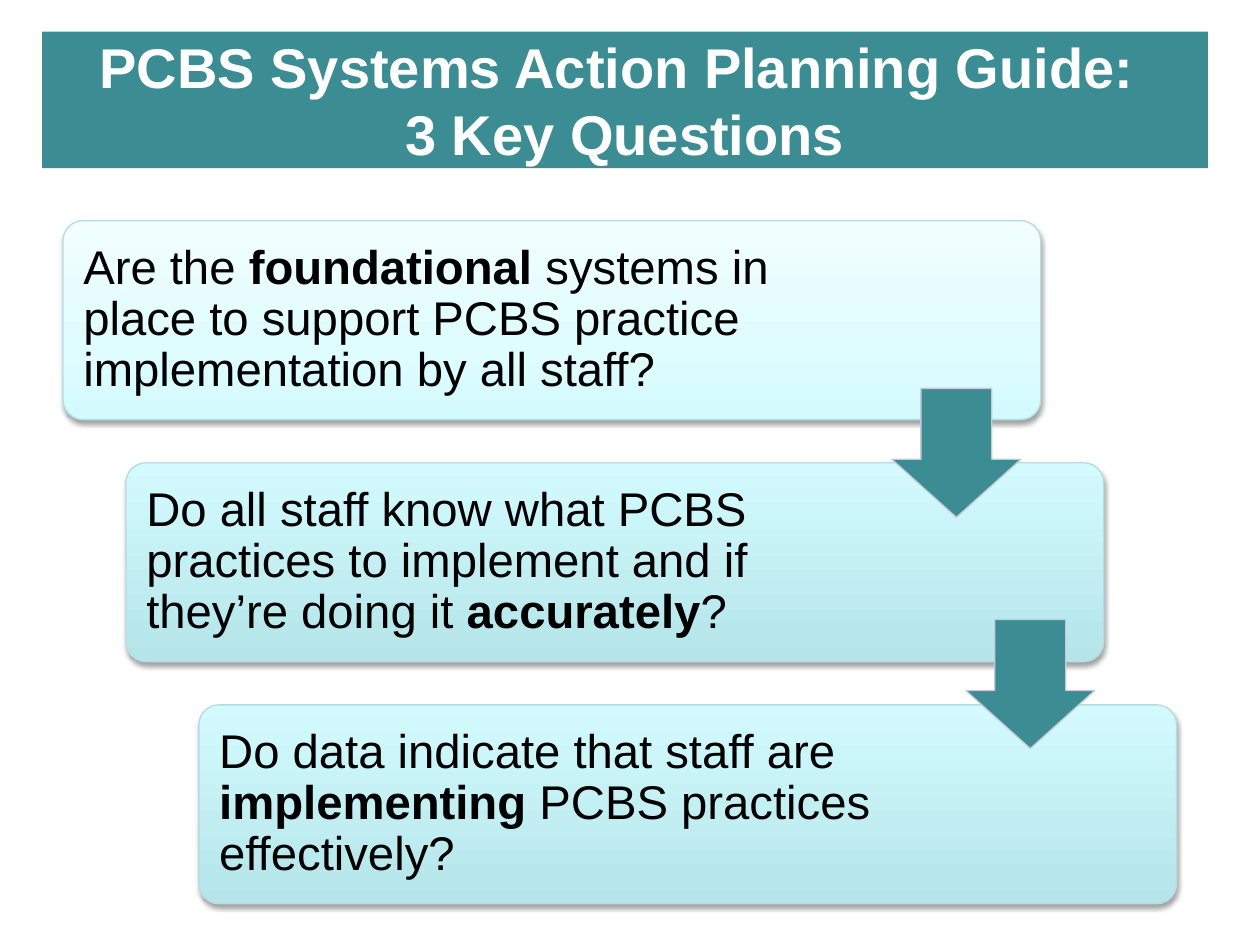
from dataclasses import dataclass

import lxml.etree
import pptx
import pptx.dml.color
import pptx.enum.shapes
import pptx.enum.text
import pptx.oxml.ns
import pptx.util

Cm = pptx.util.Cm
Pt = pptx.util.Pt
SHAPES = pptx.enum.shapes.MSO_SHAPE
ALIGN = pptx.enum.text.PP_ALIGN


@dataclass(frozen=True)
class Theme:
    font: str = "Arial"
    title_size: int = 32
    body_size: int = 27
    teal: str = "3C8C93"
    title_text: str = "FFFFFF"
    body_text: str = "000000"
    card_line: str = "B6DCDF"
    arrow_line: str = "C9C9D9"
    # Gradient stops run from the bottom of a card to its top.
    light_card: tuple = ((0, "D3FBFF"), (35, "DFFCFF"), (100, "F2FEFF"))
    deep_card: tuple = ((0, "B5E5E9"), (100, "D3FBFF"))


THEME = Theme()


@dataclass(frozen=True)
class Box:
    """A region of the slide, in centimetres."""
    left: float
    top: float
    width: float
    height: float

    def inner(self, left, top, width, height):
        return Box(self.left + left, self.top + top, width, height)

    def lengths(self):
        return Cm(self.left), Cm(self.top), Cm(self.width), Cm(self.height)


def color(value):
    return pptx.dml.color.RGBColor.from_string(value)


def add_child(parent, tag, **attributes):
    child = lxml.etree.SubElement(parent, pptx.oxml.ns.qn(tag))
    for name, value in attributes.items():
        child.set(name, str(value))
    return child


def add_plain_shape(page, kind, box, line=None):
    shape = page.shapes.add_shape(kind, *box.lengths())
    shape.shadow.inherit = False
    if line:
        shape.line.color.rgb = color(line)
        shape.line.width = Pt(0.75)
    else:
        shape.line.fill.background()
    return shape


def fill_solid(shape, value):
    shape.fill.solid()
    shape.fill.fore_color.rgb = color(value)


def fill_gradient(shape, stops):
    shape.fill.gradient()
    shape.fill.gradient_angle = 90
    stop_list = shape._element.spPr.find(".//" + pptx.oxml.ns.qn("a:gsLst"))
    for old_stop in list(stop_list):
        stop_list.remove(old_stop)
    for position, value in stops:
        stop = add_child(stop_list, "a:gs", pos=position * 1000)
        add_child(stop, "a:srgbClr", val=value)


def add_drop_shadow(shape):
    effects = shape._element.spPr.find(pptx.oxml.ns.qn("a:effectLst"))
    shadow = add_child(effects, "a:outerShdw", blurRad=Pt(3.1), dist=Pt(1.7),
                       dir=5400000, rotWithShape=0)
    tint = add_child(shadow, "a:srgbClr", val="000000")
    add_child(tint, "a:alpha", val=36000)


def format_span(span, size, value, bold):
    span.font.name = THEME.font
    span.font.size = Pt(size)
    span.font.bold = bold
    span.font.color.rgb = color(value)


def title_banner(page, box, lines):
    banner = add_plain_shape(page, SHAPES.RECTANGLE, box)
    fill_solid(banner, THEME.teal)
    frame = banner.text_frame
    frame.text = "\n".join(lines)
    frame.vertical_anchor = pptx.enum.text.MSO_ANCHOR.MIDDLE
    for para in frame.paragraphs:
        para.alignment = ALIGN.CENTER
        for span in para.runs:
            format_span(span, THEME.title_size, THEME.title_text, True)


def question_card(page, box, stops, text_width, parts):
    """Parts are plain and bold by turns, starting with plain."""
    card = add_plain_shape(page, SHAPES.ROUNDED_RECTANGLE, box, THEME.card_line)
    card.adjustments[0] = 0.1
    fill_gradient(card, stops)
    add_drop_shadow(card)

    edge = 0.13
    text_box = box.inner(edge, edge, text_width, box.height - 2 * edge)
    frame = page.shapes.add_textbox(*text_box.lengths()).text_frame
    frame.word_wrap = True
    frame.vertical_anchor = pptx.enum.text.MSO_ANCHOR.MIDDLE
    frame.margin_left = frame.margin_right = Cm(0.28)
    frame.margin_top = frame.margin_bottom = Cm(0.28)
    para = frame.paragraphs[0]
    para.alignment = ALIGN.LEFT
    para.line_spacing = 0.9
    for index, part in enumerate(parts):
        span = para.add_run()
        span.text = part
        format_span(span, THEME.body_size, THEME.body_text, index % 2 == 1)


def step_arrow(page, box):
    arrow = add_plain_shape(page, SHAPES.DOWN_ARROW, box, THEME.arrow_line)
    # The first adjustment is the shaft width, the second the head length.
    arrow.adjustments[0] = 0.55
    arrow.adjustments[1] = 0.45
    fill_solid(arrow, THEME.teal)


def question_steps(page, box):
    card_width, card_height, pitch = 19.71, 4.01, 4.88
    cards = (
        (0, THEME.light_card, 15.39,
         ("Are the ", "foundational ",
          "systems in place to support PCBS practice implementation by all staff?")),
        (1.27, THEME.deep_card, 15.14,
         ("Do all staff know what PCBS practices to implement and if they’re doing it ",
          "accurately", "?")),
        (2.74, THEME.deep_card, 15.14,
         ("Do data indicate that staff are ", "implementing",
          " PCBS practices effectively?")),
    )
    for index, (indent, stops, text_width, parts) in enumerate(cards):
        card_box = box.inner(indent, index * pitch, card_width, card_height)
        question_card(page, card_box, stops, text_width, parts)

    arrow_size = 2.6
    for left, top in ((16.71, 3.38), (18.2, 8.04)):
        step_arrow(page, box.inner(left, top, arrow_size, arrow_size))


def main():
    deck = pptx.Presentation()
    deck.slide_width, deck.slide_height = Cm(25.4), Cm(19.05)
    page = deck.slides.add_slide(deck.slide_layouts[6])
    question_steps(page, Box(1.27, 4.45, 22.45, 13.77))
    title_banner(page, Box(0.85, 0.64, 23.5, 2.75),
                 ("PCBS Systems Action Planning Guide: ", "3 Key Questions"))
    deck.save("out.pptx")


if __name__ == "__main__":
    main()
